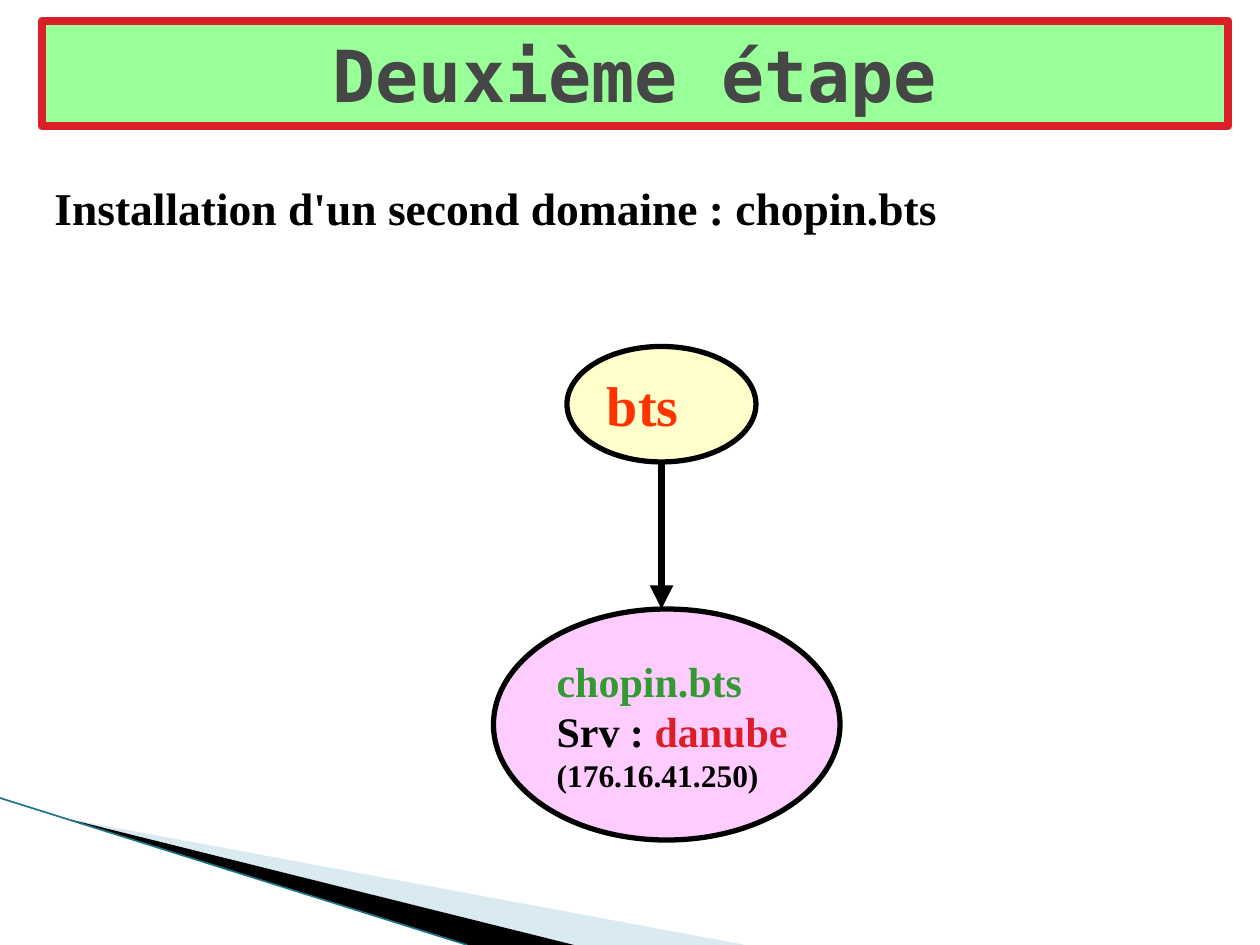
from pptx import Presentation
from pptx.dml.color import RGBColor
from pptx.enum import shapes, text
from pptx.oxml import ns
from pptx.util import Pt
from lxml import etree

INK = {
    "black": "000000", "grey": "464646", "red": "DA1F28", "mint": "99FF99",
    "pink": "FFCCFF", "cream": "FFFFCC", "green": "339933",
    "orange": "FF3300", "pale": "A0CBDC", "teal": "1B7587",
}
SERIF = "Times New Roman"
MONO = "DejaVu Sans Mono"


def color(name):
    """Return the named colour."""
    return RGBColor.from_string(INK[name])


def paint(shape, fill, edge=None, width=0):
    """Give a shape a plain fill and an outline or none."""
    shape.shadow.inherit = False
    shape.fill.solid()
    shape.fill.fore_color.rgb = color(fill)
    if edge:
        shape.line.color.rgb = color(edge)
        shape.line.width = Pt(width)
    else:
        shape.line.fill.background()


def write(shape, lines, face=SERIF, align=text.PP_ALIGN.LEFT, wrap=True):
    """Write lines, each a size and a list of (wording, colour) runs."""
    frame = shape.text_frame
    frame.word_wrap = wrap
    frame.vertical_anchor = text.MSO_ANCHOR.MIDDLE
    for i, (size, runs) in enumerate(lines):
        para = frame.add_paragraph() if i else frame.paragraphs[0]
        para.alignment = align
        para.font.name, para.font.size, para.font.bold = face, Pt(size), True
        for words, ink in runs:
            run = para.add_run()
            run.text = words
            run.font.color.rgb = color(ink)


def link(slide, start, end, ink, width, arrow=False):
    """Draw a straight line, with an arrowhead at its end if asked."""
    line = slide.shapes.add_connector(
        shapes.MSO_CONNECTOR.STRAIGHT, *map(Pt, start + end))
    line.line.color.rgb = color(ink)
    line.line.width = Pt(width)
    if arrow:
        etree.SubElement(line.line._get_or_add_ln(), ns.qn("a:tailEnd"), type="triangle")
    etree.SubElement(line._element.spPr, ns.qn("a:effectLst"))


def wedge(slide, points, fill, alpha=None):
    """Draw a filled outline, see-through if alpha is given in percent."""
    spots = [(Pt(x), Pt(y)) for x, y in points]
    build = slide.shapes.build_freeform(*spots[0])
    build.add_line_segments(spots[1:])
    shape = build.convert_to_shape()
    paint(shape, fill)
    if alpha:
        tint = shape._element.spPr.find(".//" + ns.qn("a:srgbClr"))
        etree.SubElement(tint, ns.qn("a:alpha"), val=str(alpha * 1000))


def corner(slide, left, top, width, height):
    """Draw the swoosh in the lower left corner."""
    base = top + height
    tip = (left + 39, top + 12)
    wedge(slide, [tip, (left + width, base), (left + 328, base)], "pale", 40)
    wedge(slide, [tip, (left + 328, base), (left + 267, base)], "black")
    link(slide, (left, top), (left + 267, base), "teal", 0.95)


def banner(slide, left, top, width, height):
    """Draw the framed title."""
    box = slide.shapes.add_shape(
        shapes.MSO_SHAPE.RECTANGLE, *map(Pt, (left, top, width, height)))
    paint(box, "mint", "red", 4.5)
    write(box, [(41, [("Deuxième étape", "grey")])], MONO, text.PP_ALIGN.CENTER)


def intro(slide, left, top, width, height):
    """Place the line under the title."""
    box = slide.shapes.add_textbox(*map(Pt, (left, top, width, height)))
    write(box, [(26, [("Installation d'un second domaine : chopin.bts", "black")])])


def node(slide, box, fill, lines):
    """Draw one domain as a labelled ellipse."""
    oval = slide.shapes.add_shape(shapes.MSO_SHAPE.OVAL, *map(Pt, box))
    paint(oval, fill, "black", 3)
    write(oval, lines, wrap=False)


def tree(slide, left, top, width, height):
    """Draw the parent domain, the arrow and the child domain."""
    high, low = 66, 132
    mid = left + 96
    node(slide, (left, top + height - low, width, low), "pink", [
        (24, [("chopin.bts", "green")]),
        (24, [("Srv : ", "black"), ("danube", "red")]),
        (18, [("(176.16.41.250)", "black")]),
    ])
    link(slide, (mid, top + high), (mid, top + height - low), "black", 4.5, True)
    node(slide, (mid - 54, top, 108, high), "cream", [(32, [("bts", "orange")])])


def main():
    """Build the slide and save it."""
    deck = Presentation()
    deck.slide_width, deck.slide_height = Pt(720), Pt(540)
    slide = deck.slides.add_slide(deck.slide_layouts[6])
    corner(slide, 0, 456, 426, 84)
    banner(slide, 24, 12, 678, 60)
    tree(slide, 282, 198, 198, 282)
    intro(slide, 24, 96, 678, 44.6)
    deck.save("out.pptx")


if __name__ == "__main__":
    main()
